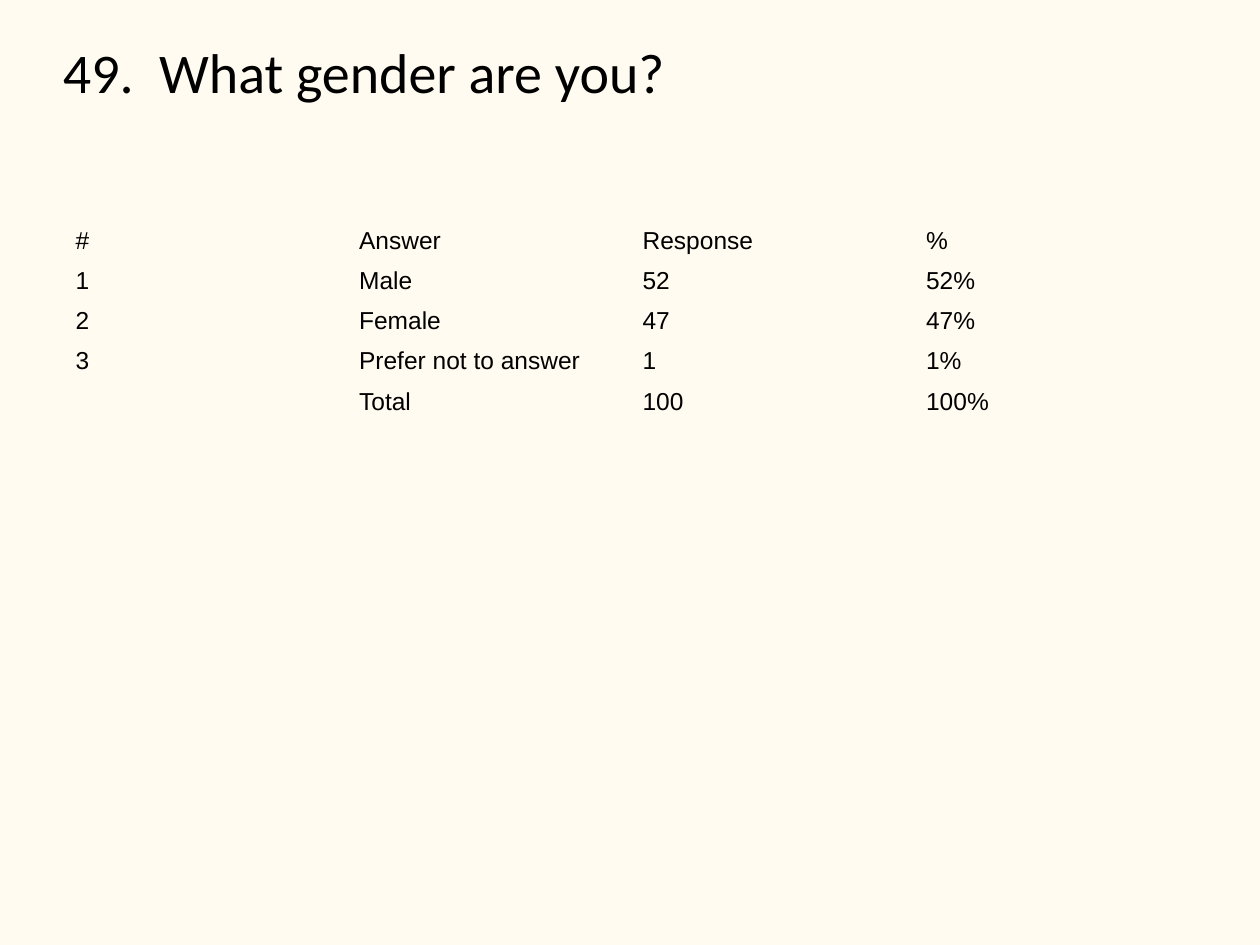
from pptx import Presentation
from pptx.dml.color import RGBColor
from pptx.enum.shapes import MSO_SHAPE
from pptx.enum.text import MSO_ANCHOR, PP_ALIGN
from pptx.util import Cm, Pt

CREAM = RGBColor(0xFF, 0xFB, 0xF0)
BLACK = RGBColor(0x00, 0x00, 0x00)
NO_STYLE_NO_GRID = "{2D5ABB26-0587-4C30-8999-92F81FD0307C}"

TITLE_FORMAT = {"name": "Calibri", "size": Pt(32)}
CELL_FORMAT = {"name": "Arial", "size": Pt(14)}

ANSWERS = [
    ("#", "Answer", "Response", "%"),
    ("1", "Male", "52", "52%"),
    ("2", "Female", "47", "47%"),
    ("3", "Prefer not to answer", "1", "1%"),
    ("", "Total", "100", "100%"),
]


def write_text(paragraph, text, font_format):
    paragraph.alignment = PP_ALIGN.LEFT
    run = paragraph.add_run()
    run.text = text
    run.font.color.rgb = BLACK
    for attribute, value in font_format.items():
        setattr(run.font, attribute, value)


# Slide and background
presentation = Presentation()
presentation.slide_width = Cm(25.4)
presentation.slide_height = Cm(19.05)
slide = presentation.slides.add_slide(presentation.slide_layouts[6])
slide.background.fill.solid()
slide.background.fill.fore_color.rgb = CREAM

# Question title
title = slide.shapes.add_shape(
    MSO_SHAPE.ROUNDED_RECTANGLE, Cm(1.27), Cm(0.76), Cm(22.86), Cm(3.18)
)
title.adjustments[0] = 0
title.shadow.inherit = False
title.fill.background()
title.line.fill.background()
frame_format = {
    "word_wrap": True,
    "vertical_anchor": MSO_ANCHOR.TOP,
    "margin_left": 0,
    "margin_top": 0,
    "margin_right": 0,
    "margin_bottom": 0,
}
for attribute, value in frame_format.items():
    setattr(title.text_frame, attribute, value)
write_text(title.text_frame.paragraphs[0], "49.  What gender are you?", TITLE_FORMAT)

# Answer table without banding or grid lines; rows grow to fit their text
row_height = Cm(0.48)
table = slide.shapes.add_table(
    len(ANSWERS), len(ANSWERS[0]),
    Cm(1.27), Cm(4.45), Cm(22.86), row_height * len(ANSWERS),
).table
table.first_row = False
table.horz_banding = False
table._tbl.tblPr.find("{*}tableStyleId").text = NO_STYLE_NO_GRID

for row_index, answer in enumerate(ANSWERS):
    table.rows[row_index].height = row_height
    for column_index, text in enumerate(answer):
        cell = table.cell(row_index, column_index)
        cell.fill.background()
        write_text(cell.text_frame.paragraphs[0], text, CELL_FORMAT)

presentation.save("out.pptx")
